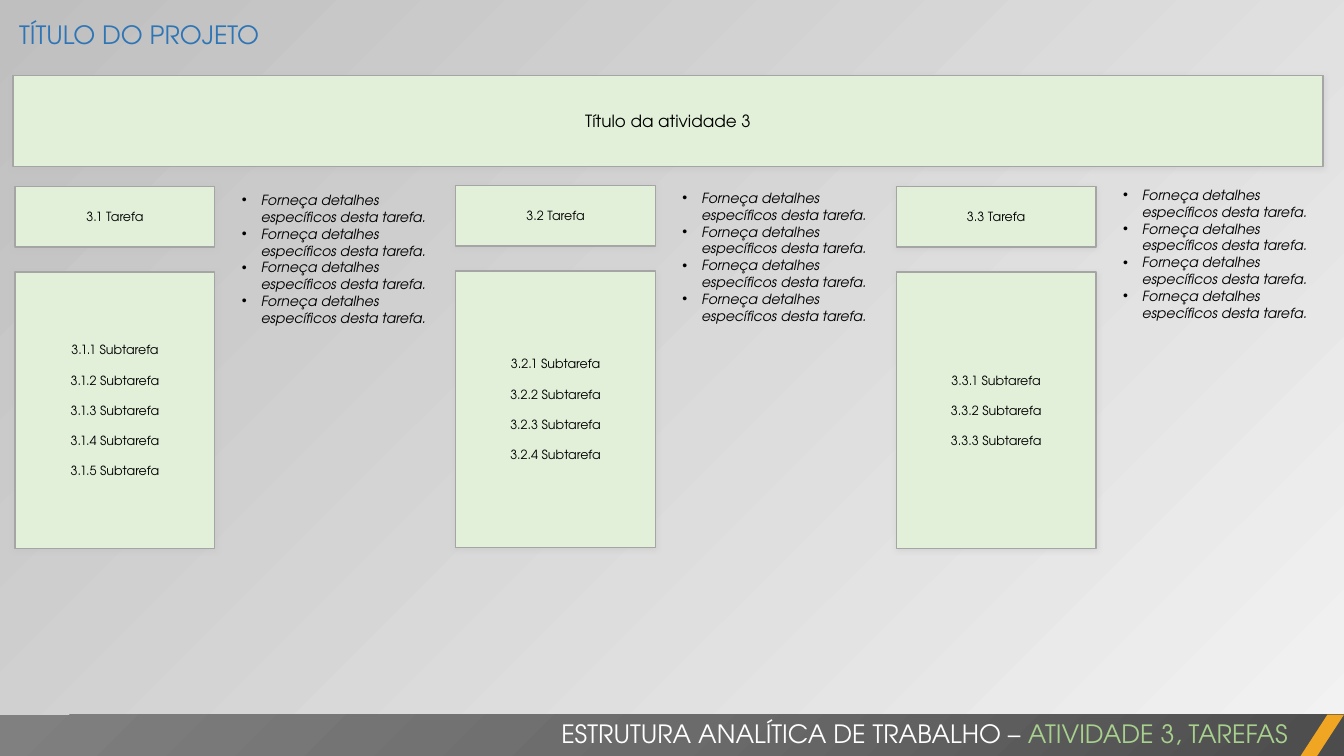
from dataclasses import dataclass

from lxml import etree
from pptx import Presentation
from pptx.dml.color import RGBColor
from pptx.enum.shapes import MSO_SHAPE
from pptx.enum.text import MSO_ANCHOR, MSO_AUTO_SIZE, PP_ALIGN
from pptx.oxml import parse_xml
from pptx.oxml.ns import nsdecls, qn
from pptx.util import Inches, Pt

RECT, SLANT = MSO_SHAPE.RECTANGLE, MSO_SHAPE.PARALLELOGRAM
TOP, MIDDLE = MSO_ANCHOR.TOP, MSO_ANCHOR.MIDDLE
LEFT, CENTER, RIGHT = PP_ALIGN.LEFT, PP_ALIGN.CENTER, PP_ALIGN.RIGHT
NO_FIT = MSO_AUTO_SIZE.NONE
COMPARISON_LAYOUT = 4


@dataclass(frozen=True)
class Theme:
    font: str = "TeX Gyre Adventor"
    text: str = "000000"
    title: str = "2E75B6"
    box: str = "E2F0D9"
    border: str = "A5A5A5"
    shadow: str = "BFBFBF"
    light: str = "F2F2F2"
    dark: str = "BFBFBF"
    bar: tuple = ("4C4C4C", "6B6B6B", "808080")
    bar_text: str = "FFFFFF"
    bar_accent: str = "A9D18E"
    slant: str = "F0A622"
    heading_size: int = 18
    activity_size: int = 12
    detail_size: int = 10
    task_size: int = 9


def rgb(color):
    return RGBColor.from_string(color)


class SlideBuilder:
    """Draws on one slide; places are left, top, width, height in % of its size."""

    def __init__(self, prs, theme):
        self.prs, self.theme = prs, theme
        self.slide = prs.slides.add_slide(prs.slide_layouts[COMPARISON_LAYOUT])
        self.title_holder, *self.bodies = self.slide.placeholders

    def place(self, at):
        w, h = self.prs.slide_width, self.prs.slide_height
        return [int(share * side / 100) for share, side in zip(at, (w, h, w, h))]

    def move(self, sp, at):
        sp.left, sp.top, sp.width, sp.height = self.place(at)

    def set_text(self, sp, lines, size, color, align=LEFT, anchor=TOP, gap=0):
        tf = sp.text_frame
        tf.word_wrap, tf.auto_size, tf.vertical_anchor = True, NO_FIT, anchor
        tf.text = "\n".join(lines)
        for i, p in enumerate(tf.paragraphs):
            p.alignment, p.line_spacing = align, 1.0
            p.space_before, p.space_after = Pt(gap if i else 0), Pt(0)
            p.font.name, p.font.size, p.font.bold = self.theme.font, Pt(size), False
            p.font.color.rgb = rgb(color)
        return tf

    def background(self):
        fill = self.slide.background.fill
        fill.gradient()
        fill.gradient_angle = 135
        for stop, color in zip(fill.gradient_stops, (self.theme.light, self.theme.dark)):
            stop.color.rgb = rgb(color)

    def title(self, text, at):
        self.move(self.title_holder, at)
        self.set_text(self.title_holder, [text], self.theme.heading_size, self.theme.title)

    def shape(self, kind, at, color):
        sp = self.slide.shapes.add_shape(kind, *self.place(at))
        sp.shadow.inherit = False
        sp.fill.solid()
        sp.fill.fore_color.rgb = rgb(color)
        sp.line.fill.background()
        return sp

    def box(self, lines, at, size, gap=0):
        sp = self.shape(RECT, at, self.theme.box)
        sp.line.color.rgb, sp.line.width = rgb(self.theme.border), Pt(1)
        effects = sp._element.spPr.find(qn("a:effectLst"))
        effects.append(parse_xml(
            f'<a:outerShdw {nsdecls("a")} blurRad="{Pt(4)}" dist="{Pt(1)}" dir="5400000">'
            f'<a:srgbClr val="{self.theme.shadow}"><a:alpha val="40000"/></a:srgbClr>'
            '</a:outerShdw>'))
        self.set_text(sp, lines, size, self.theme.text, CENTER, MIDDLE, gap)

    def details(self, body, lines, at):
        self.move(body, at)
        tf = self.set_text(body, lines, self.theme.detail_size, self.theme.text)
        for p in tf.paragraphs:
            p.font.italic = True
            pPr = p._p.get_or_add_pPr()
            pPr.set("marL", str(Inches(0.19)))
            pPr.set("indent", str(Inches(-0.19)))
            bullet_font = etree.Element(qn("a:buFont"), typeface="Arial")
            bullet = etree.Element(qn("a:buChar"), char="•")
            pPr.find(qn("a:defRPr")).addprevious(bullet_font)
            bullet_font.addnext(bullet)

    def bar(self, at):
        """Footer band with a circular gradient centred on its lower right corner."""
        sp = self.shape(RECT, at, self.theme.bar[0])
        stops = "".join(f'<a:gs pos="{i * 50000}"><a:srgbClr val="{color}"/></a:gs>'
                        for i, color in enumerate(self.theme.bar))
        spPr = sp._element.spPr
        spPr.replace(spPr.find(qn("a:solidFill")), parse_xml(
            f'<a:gradFill {nsdecls("a")}><a:gsLst>{stops}</a:gsLst>'
            '<a:path path="circle"><a:fillToRect l="100000" t="100000"/></a:path>'
            '</a:gradFill>'))

    def bar_heading(self, text, accent, at):
        sp = self.slide.shapes.add_textbox(*self.place(at))
        tf = self.set_text(sp, [text], self.theme.heading_size, self.theme.bar_text, RIGHT)
        p = tf.paragraphs[0]
        r = p.add_run()
        r.text = accent
        r.font.color.rgb = rgb(self.theme.bar_accent)

    def drop_unused_bodies(self, used):
        for body in self.bodies[used:]:
            body._element.getparent().remove(body._element)


# Subtask count, top of the boxes and top of the details for each task
TASKS = [(5, 24.67, 24.67), (4, 24.53, 24.4), (3, 24.67, 24)]
DETAILS = ["Forneça detalhes específicos desta tarefa."] * 4
ACTIVITY = 3
FIRST_COLUMN, COLUMN_STEP, BOX_WIDTH = 1.13, 32.78, 14.85
DETAILS_OFFSET, SUBTASKS_OFFSET = 16.12, 11.33
BAR_TOP, BAR_HEIGHT = 94.53, 5.47


def main():
    prs = Presentation()
    prs.slide_width, prs.slide_height = Inches(13.33), Inches(7.5)
    theme = Theme()
    s = SlideBuilder(prs, theme)
    s.background()
    s.title("TÍTULO DO PROJETO", (0.68, 1.87, 75.84, 5.33))
    s.box([f"Título da atividade {ACTIVITY}"], (0.98, 10, 97.45, 12), theme.activity_size)

    for i, (count, top, details_top) in enumerate(TASKS):
        left = FIRST_COLUMN + i * COLUMN_STEP
        task = f"{ACTIVITY}.{i + 1}"
        subtasks = [f"{task}.{n} Subtarefa" for n in range(1, count + 1)]
        s.box([f"{task} Tarefa"], (left, top, BOX_WIDTH, 8), theme.task_size)
        s.box(subtasks, (left, top + SUBTASKS_OFFSET, BOX_WIDTH, 36.53),
              theme.task_size, gap=10.8)
        s.details(s.bodies[i], DETAILS, (left + DETAILS_OFFSET, details_top, 15.45, 40))
    s.drop_unused_bodies(len(TASKS))

    s.bar((0, BAR_TOP, 100, BAR_HEIGHT))
    slant = s.shape(SLANT, (96.77, BAR_TOP, 3.23, BAR_HEIGHT), theme.slant)
    slant.adjustments[0] = 0.65
    s.bar_heading("ESTRUTURA ANALÍTICA DE TRABALHO – ", "ATIVIDADE 3, TAREFAS",
                  (7.43, 94.4, 89.12, 5.33))
    prs.save("out.pptx")


if __name__ == "__main__":
    main()
